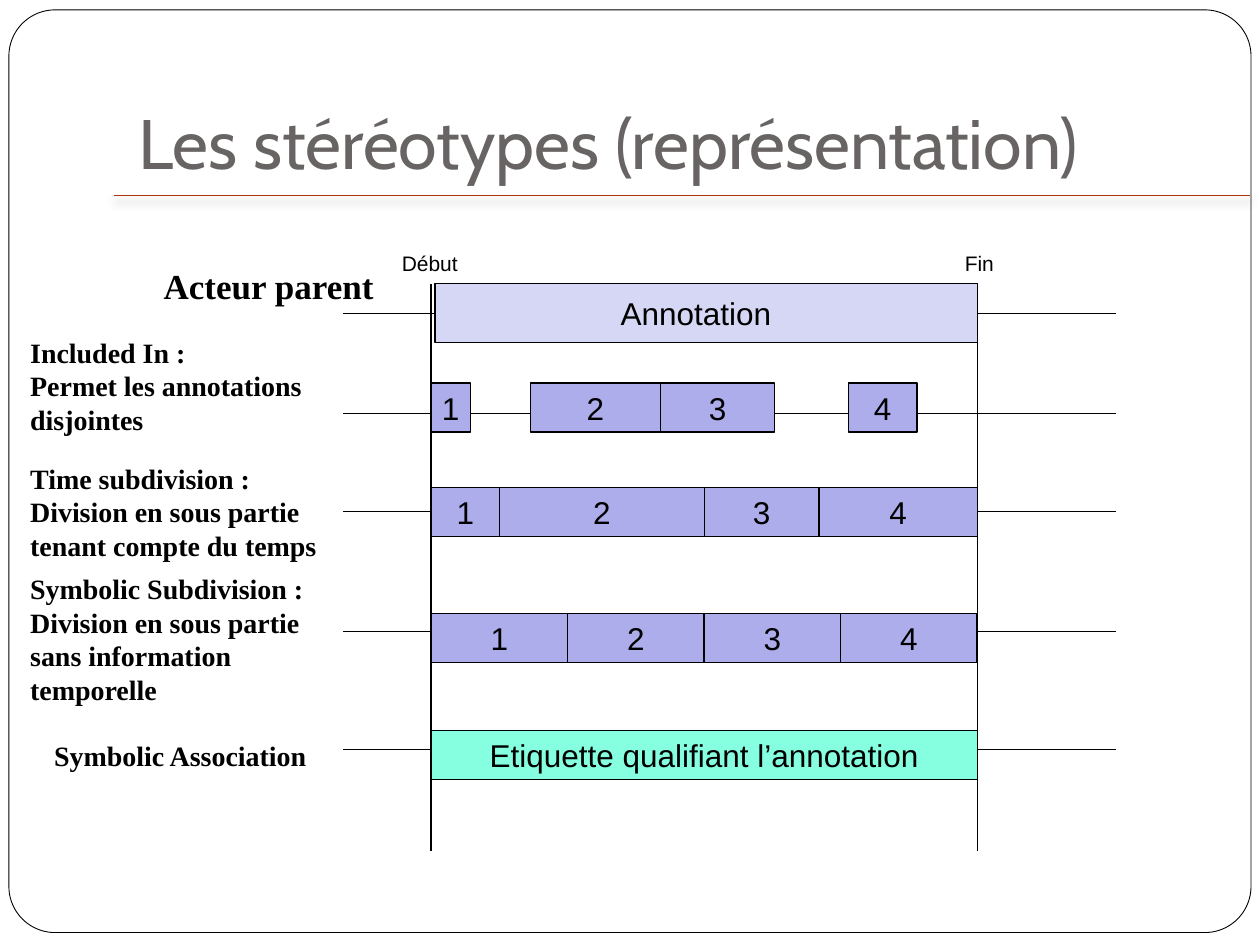
from lxml import etree
from pptx import Presentation
from pptx.dml.color import RGBColor as RGB
from pptx.enum.shapes import MSO_CONNECTOR as Connector, MSO_SHAPE as Shape
from pptx.enum.text import MSO_ANCHOR as Anchor, MSO_AUTO_SIZE as AutoSize, PP_ALIGN as Align
from pptx.oxml.ns import qn
from pptx.util import Cm, Pt

# Content: labels as (lines, left, top, width, height, size, alignment), in cm
TITLE = "Les stéréotypes (représentation)"
LABELS = [
    (["Included In :", "Permet les annotations disjointes"],
     0.36, 6.63, 6.55, 2.31, "label", Align.LEFT),
    (["Time subdivision :", "Division en sous partie tenant compte du temps"],
     0.36, 9.17, 6.55, 2.31, "label", Align.LEFT),
    (["Symbolic Subdivision :", "Division en sous partie sans information temporelle"],
     0.36, 11.4, 6.55, 3, "label", Align.LEFT),
    (["Symbolic Association"], 0.56, 14.76, 6.15, 0.94, "label", Align.CENTER),
    (["Acteur parent"], 3.05, 5.21, 4.8, 1.12, "parent", Align.LEFT),
]

# Time axis, in cm; segments are (text, start, end) measured from its start
START, SPAN = 8.69, 11.01
AXIS_LEFT, AXIS_RIGHT = 6.91, 22.5
AXIS_TOP, AXIS_BOTTOM = 5.72, 17.15
MARKERS = [("Début", 7.85, 1.65, START), ("Fin", 19.2, 1.12, START + SPAN)]


def adjoining(edges):
    """Numbered segments that touch each other."""
    pairs = zip(edges, edges[1:])
    return [(str(number), *pair) for number, pair in enumerate(pairs, 1)]


# Tiers as (line y, bar top, bar height, fill, segments)
TIERS = [
    (6.32, 5.72, 1.19, "parent", [("Annotation", 0.08, SPAN)]),
    (8.33, 7.72, 0.99, "part",
     [("1", 0, 0.79), ("2", 2.01, 4.62), ("3", 4.62, 6.93), ("4", 8.41, 9.8)]),
    (10.31, 9.83, 0.99, "part", adjoining([0, 1.38, 5.51, 7.82, SPAN])),
    (12.73, 12.37, 0.99, "part", adjoining([SPAN * i / 4 for i in range(5)])),
    (15.11, 14.73, 0.99, "tag", [("Etiquette qualifiant l’annotation", 0, SPAN)]),
]

THEME = {
    "color": {"title": RGB(0x69, 0x64, 0x64), "ink": RGB(0, 0, 0),
              "rule": RGB(0xAF, 0x34, 0x08), "parent": RGB(0xD6, 0xD6, 0xF5),
              "part": RGB(0xAD, 0xAD, 0xEB), "tag": RGB(0x85, 0xFF, 0xE0)},
    "font": {"title": "Cabin", "label": "Times New Roman", "parent": "Times New Roman",
             "marker": "Arial", "bar": "Arial"},
    "size": {"title": Pt(40), "label": Pt(16), "parent": Pt(20),
             "marker": Pt(12), "bar": Pt(18)},
    "line": Pt(0.75), "frame": Pt(0.5),
}


def write(shape, lines, role, align, color="ink", bold=False):
    frame = shape.text_frame
    frame.text = "\n".join(lines)
    for paragraph in frame.paragraphs:
        paragraph.alignment = align
        font = paragraph.font
        font.name, font.size = THEME["font"][role], THEME["size"][role]
        font.color.rgb, font.bold = THEME["color"][color], bold


def add_label(slide, lines, box, role, align, bold=False, wrap=True):
    shape = slide.shapes.add_textbox(*map(Cm, box))
    shape.text_frame.word_wrap = wrap
    write(shape, lines, role, align, bold=bold)


def add_line(slide, x1, y1, x2, y2, color="ink"):
    """Add a line and return its effect list, which is empty."""
    line = slide.shapes.add_connector(Connector.STRAIGHT, *map(Cm, (x1, y1, x2, y2)))
    line.line.color.rgb, line.line.width = THEME["color"][color], THEME["line"]
    return etree.SubElement(line._element.spPr, qn("a:effectLst"))


def add_bar(slide, text, left, top, width, height, fill):
    bar = slide.shapes.add_shape(Shape.RECTANGLE, *map(Cm, (left, top, width, height)))
    bar.shadow.inherit = False
    bar.fill.solid()
    bar.fill.fore_color.rgb = THEME["color"][fill]
    bar.line.color.rgb, bar.line.width = THEME["color"]["ink"], THEME["line"]
    frame = bar.text_frame
    frame.vertical_anchor = Anchor.MIDDLE
    frame.margin_left = frame.margin_top = frame.margin_bottom = 0
    # The parent bar's text sits a little left of centre
    frame.margin_right = Cm(0.41 if fill == "parent" else 0)
    write(bar, [text], "bar", Align.CENTER)


def add_frame(slide):
    frame = slide.shapes.add_shape(Shape.ROUNDED_RECTANGLE,
                                   *map(Cm, (0.18, 0.2, 25.04, 18.6)))
    frame.adjustments[0] = 0.05
    frame.shadow.inherit = False
    frame.fill.background()
    frame.line.color.rgb, frame.line.width = THEME["color"]["ink"], THEME["frame"]


def add_title_rule(slide):
    effects = add_line(slide, 2.29, 3.94, 25.2, 3.94, "rule")
    shadow = etree.SubElement(effects, qn("a:outerShdw"), blurRad=str(Pt(5)),
                              dist=str(Pt(3)), dir="5400000", rotWithShape="0")
    color = etree.SubElement(shadow, qn("a:srgbClr"), val="000000")
    etree.SubElement(color, qn("a:alpha"), val="40000")


def add_title(slide):
    title = slide.shapes.title
    title.left, title.top, title.width, title.height = map(Cm, (2.54, 0.76, 21.59, 3.18))
    frame = title.text_frame
    frame.auto_size, frame.vertical_anchor = AutoSize.NONE, Anchor.BOTTOM
    frame.margin_bottom = Cm(0.25)
    write(title, [TITLE], "title", Align.LEFT, "title")


def main():
    presentation = Presentation()
    presentation.slide_width, presentation.slide_height = Cm(25.4), Cm(19.05)
    slide = presentation.slides.add_slide(presentation.slide_layouts[5])

    # Frame and heading
    add_frame(slide)
    add_title_rule(slide)
    add_title(slide)

    # Tier names
    for lines, left, top, width, height, role, align in LABELS:
        add_label(slide, lines, (left, top, width, height), role, align, bold=True)

    # Tier lines, then start and end markers
    for y, *_ in TIERS:
        add_line(slide, AXIS_LEFT, y, AXIS_RIGHT, y)
    for text, left, width, x in MARKERS:
        add_line(slide, x, AXIS_BOTTOM, x, AXIS_TOP)
        add_label(slide, [text], (left, 4.93, width, 0.76), "marker", Align.LEFT, wrap=False)

    # Annotation bars
    for _, top, height, fill, segments in TIERS:
        for text, start, end in segments:
            add_bar(slide, text, START + start, top, end - start, height, fill)

    presentation.save("out.pptx")


if __name__ == "__main__":
    main()
